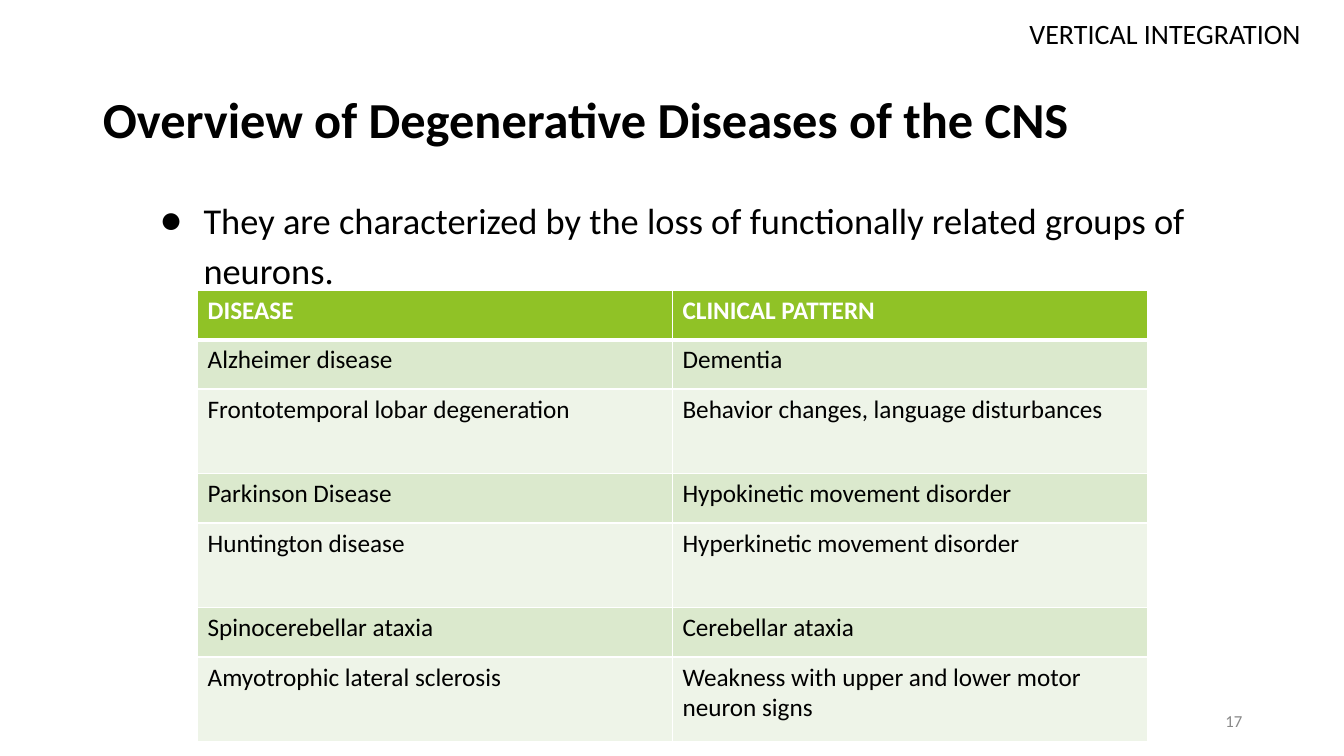
from dataclasses import dataclass

from lxml import etree
from pptx import Presentation
from pptx.dml.color import RGBColor
from pptx.enum.text import MSO_ANCHOR, MSO_AUTO_SIZE, PP_ALIGN
from pptx.oxml.ns import qn
from pptx.util import Inches, Pt

LEFT, RIGHT = PP_ALIGN.LEFT, PP_ALIGN.RIGHT
TOP, MIDDLE = MSO_ANCHOR.TOP, MSO_ANCHOR.MIDDLE
NO_AUTOFIT = MSO_AUTO_SIZE.NONE


@dataclass(frozen=True)
class Theme:
    font: str = "Calibri"
    text: str = "000000"
    muted: str = "888888"
    white: str = "FFFFFF"
    header: str = "90C226"
    bands: tuple = ("DBE9CD", "EEF4E8")
    title_size: int = 36
    body_size: int = 26
    tag_size: int = 20
    table_size: int = 18
    number_size: int = 12


theme = Theme()


def style(paragraph, size, color=theme.text, bold=False, align=LEFT):
    paragraph.alignment = align
    font = paragraph.font
    font.name, font.size, font.bold = theme.font, Pt(size), bold
    font.color.rgb = RGBColor.from_string(color)


def place_text(shape, box, text, anchor=TOP, inset=0.05):
    """Position a text shape, fill in its wording and return its paragraph."""
    shape.left, shape.top, shape.width, shape.height = map(Inches, box)
    frame = shape.text_frame
    frame.word_wrap = True
    frame.auto_size = NO_AUTOFIT
    frame.vertical_anchor = anchor
    frame.margin_left = frame.margin_right = Inches(0.1)
    frame.margin_top = frame.margin_bottom = Inches(inset)
    frame.text = text
    return frame.paragraphs[0]


presentation = Presentation()
presentation.slide_width, presentation.slide_height = Inches(13.33), Inches(7.5)
slide = presentation.slides.add_slide(presentation.slide_layouts[5])
shapes = slide.shapes

# Title
title = place_text(shapes.title, (0.92, 0.4, 11.5, 1.45),
                   "Overview of Degenerative Diseases of the CNS", MIDDLE)
title.line_spacing = 1.15
style(title, theme.title_size, bold=True)

# Bulleted statement
statement = place_text(
    shapes.add_textbox(0, 0, 0, 0), (0.92, 1.85, 11.92, 5.33),
    "They are characterized by the loss of functionally related groups of neurons.")
properties = statement._p.get_or_add_pPr()
properties.set("marL", str(Inches(1)))
properties.set("indent", str(Inches(-0.43)))
bullet_color = etree.SubElement(properties, qn("a:buClr"))
etree.SubElement(bullet_color, qn("a:srgbClr"), val=theme.text)
etree.SubElement(properties, qn("a:buFont"), typeface=theme.font)
etree.SubElement(properties, qn("a:buChar"), char="●")
statement.line_spacing = 1.15
style(statement, theme.body_size)

# Slide number and section tag
number = place_text(shapes.add_textbox(0, 0, 0, 0), (9.42, 6.95, 3, 0.4), "17", MIDDLE)
style(number, theme.number_size, theme.muted, align=RIGHT)
tag = place_text(shapes.add_textbox(0, 0, 0, 0), (9.53, 0.06, 3.47, 0.45),
                 "VERTICAL INTEGRATION", inset=0.1)
style(tag, theme.tag_size, align=RIGHT)

# Disease table
SHORT, TALL = 0.49, 0.84
rows = [
    (SHORT, "DISEASE", "CLINICAL PATTERN"),
    (SHORT, "Alzheimer disease", "Dementia"),
    (TALL, "Frontotemporal lobar degeneration", "Behavior changes, language disturbances"),
    (SHORT, "Parkinson Disease", "Hypokinetic movement disorder"),
    (TALL, "Huntington disease", "Hyperkinetic movement disorder"),
    (SHORT, "Spinocerebellar ataxia", "Cerebellar ataxia"),
    (TALL, "Amyotrophic lateral sclerosis", "Weakness with upper and lower motor neuron signs"),
]
table = shapes.add_table(len(rows), 2, Inches(1.96), Inches(2.88),
                         Inches(9.41), Inches(4.47)).table
for column in table.columns:
    column.width = Inches(4.71)

for row_index, (height, *texts) in enumerate(rows):
    table.rows[row_index].height = Inches(height)
    is_header = row_index == 0
    fill = theme.header if is_header else theme.bands[(row_index - 1) % 2]
    # The rule under the header is thicker than the others
    borders = {"lnL": 1, "lnR": 1, "lnT": 3 if row_index == 1 else 1,
               "lnB": 3 if is_header else 1}
    for column_index, text in enumerate(texts):
        cell = table.cell(row_index, column_index)
        cell.text = text
        style(cell.text_frame.paragraphs[0], theme.table_size,
              theme.white if is_header else theme.text, is_header)
        cell_properties = cell._tc.get_or_add_tcPr()
        for side, width in borders.items():
            line = etree.SubElement(cell_properties, qn(f"a:{side}"), w=str(Pt(width)))
            line_fill = etree.SubElement(line, qn("a:solidFill"))
            etree.SubElement(line_fill, qn("a:srgbClr"), val=theme.white)
        cell.fill.solid()
        cell.fill.fore_color.rgb = RGBColor.from_string(fill)

presentation.save("out.pptx")
